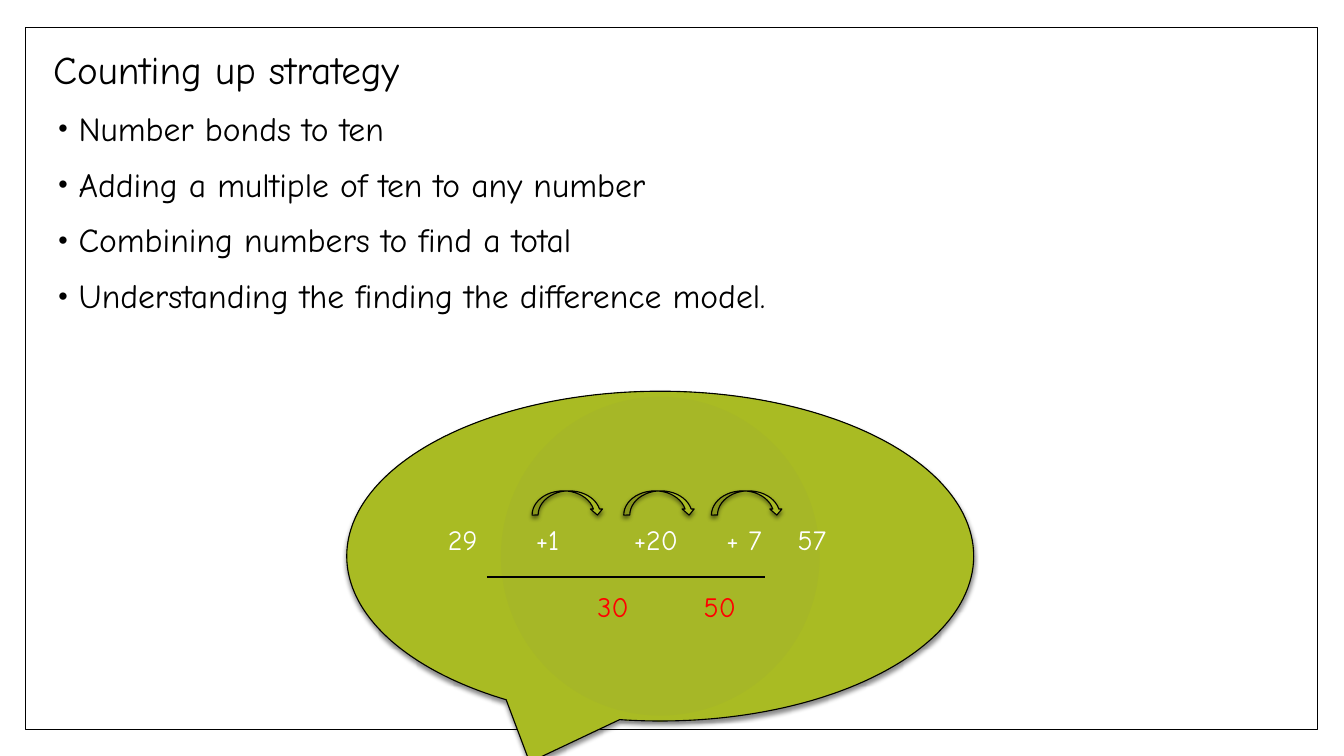
from pptx import Presentation
from pptx.dml.color import RGBColor
from pptx.enum.shapes import MSO_CONNECTOR, MSO_SHAPE
from pptx.enum.text import MSO_ANCHOR, PP_ALIGN
from pptx.oxml import parse_xml
from pptx.oxml.ns import nsdecls
from pptx.util import Cm, Pt

RECT = MSO_SHAPE.RECTANGLE
CALLOUT = MSO_SHAPE.OVAL_CALLOUT
HOP = MSO_SHAPE.CURVED_DOWN_ARROW
STRAIGHT = MSO_CONNECTOR.STRAIGHT
MIDDLE, TOP = MSO_ANCHOR.MIDDLE, MSO_ANCHOR.TOP
CENTER = PP_ALIGN.CENTER

BLACK = RGBColor(0x00, 0x00, 0x00)
WHITE = RGBColor(0xFF, 0xFF, 0xFF)
RED = RGBColor(0xFF, 0x00, 0x00)
GREEN_STOPS = (
    (0, RGBColor(0xA6, 0xB7, 0x27)),
    (90, RGBColor(0xA9, 0xBB, 0x23)),
    (100, RGBColor(0xA1, 0xB3, 0x16)),
)
FONT = "Comic Neue"

TITLE = "Counting up strategy"
SKILLS = (
    "Number bonds to ten",
    "Adding a multiple of ten to any number",
    "Combining numbers to find a total",
    "Understanding the finding the difference model.",
)
STEPS = ((2.92, "29"), (5.06, "+1"), (7.79, "+20"), (10.01, "+ 7"), (11.72, "57"))
STOPS = ((6.71, "30"), (9.4, "50"))
HOP_LEFTS = (4.67, 6.98, 9.19)


def style_run(p, size, color):
    """Format the runs of a paragraph."""
    for r in p.runs:
        r.font.name = FONT
        r.font.size = Pt(size)
        r.font.color.rgb = color


def add_bullet(p):
    """Give a paragraph a hanging black bullet."""
    pPr = p._p.get_or_add_pPr()
    pPr.set("marL", str(Cm(0.64)))
    pPr.set("indent", str(-Cm(0.51)))
    for xml in (
        f'<a:buClr {nsdecls("a")}><a:srgbClr val="{BLACK}"/></a:buClr>',
        f'<a:buSzPct {nsdecls("a")} val="80000"/>',
        f'<a:buFont {nsdecls("a")} typeface="Arial"/>',
        f'<a:buChar {nsdecls("a")} char="•"/>',
    ):
        pPr.append(parse_xml(xml))


def add_green_shape(s, kind, x, y, w, h):
    """Add a green shape with a radial fill, thin outline and soft shadow."""
    sp = s.shapes.add_shape(kind, Cm(x), Cm(y), Cm(w), Cm(h))
    sp.line.color.rgb = BLACK
    sp.line.width = Pt(0.79)
    sp.shadow.inherit = False
    stops = "".join(
        f'<a:gs pos="{pos * 1000}"><a:srgbClr val="{color}"/></a:gs>'
        for pos, color in GREEN_STOPS
    )
    spPr = sp._element.spPr
    spPr.insert(2, parse_xml(
        f'<a:gradFill {nsdecls("a")} rotWithShape="1"><a:gsLst>{stops}</a:gsLst>'
        '<a:path path="circle"><a:fillToRect l="100000" t="100000" r="100000" b="100000"/>'
        '</a:path></a:gradFill>'
    ))
    spPr[-1].append(parse_xml(
        f'<a:outerShdw {nsdecls("a")} blurRad="{Pt(3)}" dist="{Pt(2)}" dir="5400000" '
        f'rotWithShape="0"><a:srgbClr val="{BLACK}"><a:alpha val="45000"/></a:srgbClr>'
        '</a:outerShdw>'
    ))
    return sp


def add_frame(s, x, y, w, h):
    """Draw the white page frame."""
    sp = s.shapes.add_shape(RECT, Cm(x), Cm(y), Cm(w), Cm(h))
    sp.shadow.inherit = False
    sp.fill.solid()
    sp.fill.fore_color.rgb = WHITE
    sp.line.color.rgb = BLACK
    sp.line.width = Pt(1)


def add_strategy(s, x, y, w, h):
    """Write the heading and the bulleted skills."""
    tf = s.shapes.add_textbox(Cm(x), Cm(y), Cm(w), Cm(h)).text_frame
    tf.word_wrap = True
    tf.vertical_anchor = TOP
    tf.text = "\n".join((TITLE, *SKILLS))
    for i, p in enumerate(tf.paragraphs):
        p.line_spacing = 0.9
        p.space_before = Pt(14)
        style_run(p, 24 if i else 28, BLACK)
        if i:
            add_bullet(p)


def add_number(s, cx, cy, text, color):
    """Centre a number on a point."""
    w, h = 2, 1
    tf = s.shapes.add_textbox(Cm(cx - w / 2), Cm(cy - h / 2), Cm(w), Cm(h)).text_frame
    tf.word_wrap = True
    tf.vertical_anchor = MIDDLE
    tf.text = text
    p = tf.paragraphs[0]
    p.alignment = CENTER
    style_run(p, 20, color)


def add_number_line(s, x, y, w, h):
    """Draw the speech bubble with the hops along a number line."""
    add_green_shape(s, CALLOUT, x, y, w, h)
    for left in HOP_LEFTS:
        add_green_shape(s, HOP, x + left, y + 2.51, 1.8, 0.61)
    line_y = Cm(y + 4.67)
    line = s.shapes.add_connector(STRAIGHT, Cm(x + 3.53), line_y, Cm(x + 10.54), line_y)
    line.line.color.rgb = BLACK
    line.line.width = Pt(1.5)
    line._element.spPr.append(parse_xml(f'<a:effectLst {nsdecls("a")}/>'))
    for numbers, cy, color in ((STEPS, 3.74, WHITE), (STOPS, 5.41, RED)):
        for cx, text in numbers:
            add_number(s, x + cx, y + cy, text, color)


def main():
    """Build and save the slide."""
    prs = Presentation()
    prs.slide_width, prs.slide_height = Cm(33.87), Cm(19.05)
    s = prs.slides.add_slide(prs.slide_layouts[6])
    add_frame(s, 0.64, 0.69, 32.56, 17.7)
    add_strategy(s, 1.09, 1.14, 24.61, 17.5)
    add_number_line(s, 8.74, 9.86, 15.8, 8.31)
    prs.save("out.pptx")


if __name__ == "__main__":
    main()
